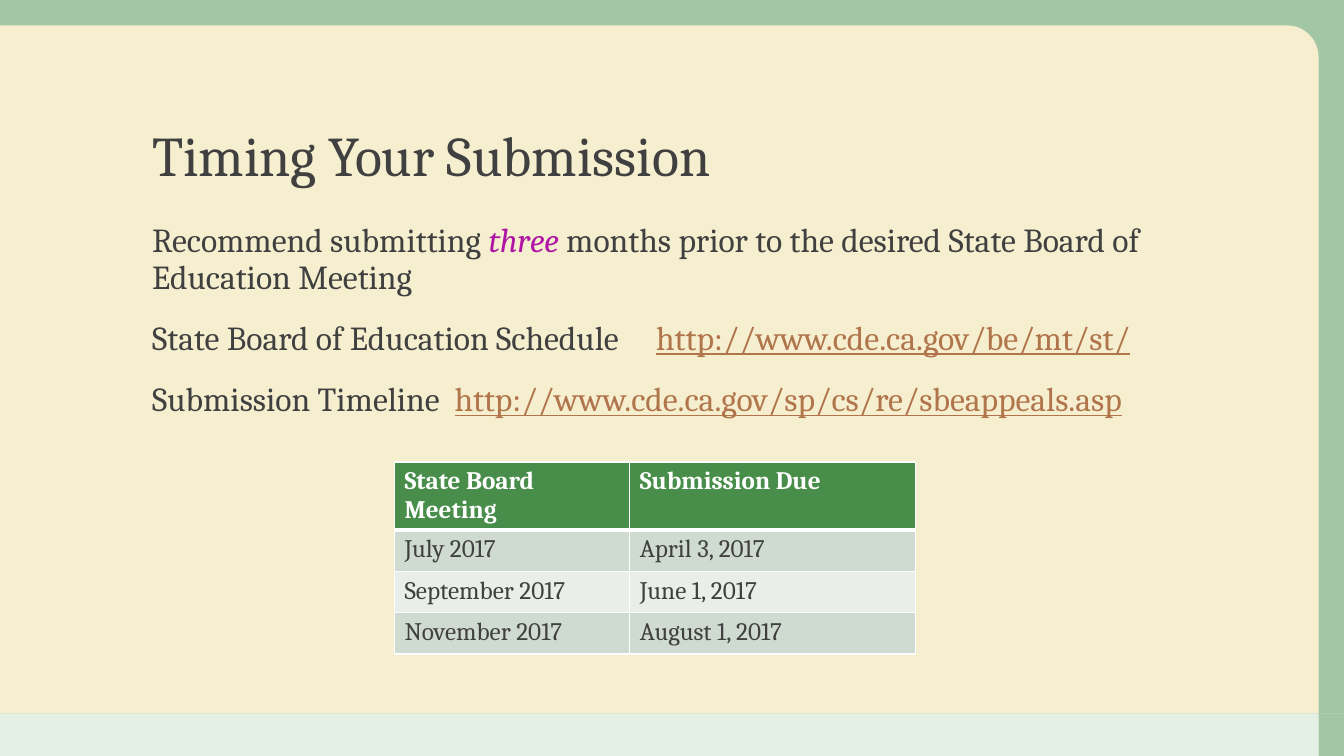
"""Build the slide on submission timing, with its schedule table."""
from typing import NamedTuple

from pptx import Presentation
from pptx.dml.color import RGBColor
from pptx.enum import shapes, text
from pptx.oxml.ns import qn
from pptx.util import Cm, Pt
from lxml import etree

FONT = "Cambria"
COLORS = {
    "ink": "404040", "accent": "B014A5", "link": "B1754C", "white": "FFFFFF",
    "green": "488E4A", "mint": "D8EBD8", "cream": "F5EECF",
    "band": "CFDBD0", "light_band": "E9EEE9",
}
WIDTH, HEIGHT = 33.87, 19.05
PANEL_RIGHT, PANEL_BOTTOM, EDGE = 33.23, 17.98, 0.64


class Panel(NamedTuple):
    left: float
    top: float
    right: float
    bottom: float
    color: str
    opacity: int = 100
    rounding: float = 0


class Piece(NamedTuple):
    wording: str
    color: str = "ink"
    italic: bool = False
    underline: bool = False


class Line(NamedTuple):
    pieces: list[Piece]
    tab: float = 0


PANELS = [
    Panel(0, PANEL_BOTTOM, PANEL_RIGHT, HEIGHT, "mint", 70),
    Panel(PANEL_RIGHT, PANEL_BOTTOM, WIDTH, HEIGHT, "green", 50),
    Panel(0, 0, WIDTH, PANEL_BOTTOM, "green", 50),
    Panel(0, EDGE, PANEL_RIGHT, PANEL_BOTTOM, "cream", rounding=0.046),
]
LINES = [
    Line([Piece("Recommend submitting "), Piece("three", "accent", italic=True),
          Piece(" months prior to the desired State Board of Education Meeting")]),
    Line([Piece("State Board of Education Schedule\t"),
          Piece("http://www.cde.ca.gov/be/mt/st/", "link", underline=True)], 12.52),
    Line([Piece("Submission Timeline\t"),
          Piece("http://www.cde.ca.gov/sp/cs/re/sbeappeals.asp", "link", underline=True)], 7.83),
]
SCHEDULE = [
    ("State Board Meeting", "Submission Due"),
    ("July 2017", "April 3, 2017"),
    ("September 2017", "June 1, 2017"),
    ("November 2017", "August 1, 2017"),
]
COLUMN_WIDTHS = (5.93, 7.2)
ROW_HEIGHT = 1.04


def rgb(name: str) -> RGBColor:
    """Return the named colour."""
    return RGBColor.from_string(COLORS[name])


def style_font(font, size: float, color: str, bold: bool = False) -> None:
    """Set typeface, size, colour and weight."""
    font.name, font.size, font.bold = FONT, Pt(size), bold
    font.color.rgb = rgb(color)


def add_panel(slide, panel: Panel) -> None:
    """Draw one background panel."""
    kind = shapes.MSO_SHAPE.ROUND_1_RECTANGLE if panel.rounding else shapes.MSO_SHAPE.RECTANGLE
    shape = slide.shapes.add_shape(
        kind, Cm(panel.left), Cm(panel.top),
        Cm(panel.right - panel.left), Cm(panel.bottom - panel.top))
    shape.shadow.inherit = False
    shape.line.fill.background()
    shape.fill.solid()
    shape.fill.fore_color.rgb = rgb(panel.color)
    if panel.rounding:
        shape.adjustments[0] = panel.rounding
    if panel.opacity < 100:
        color = shape._element.spPr.find(f".//{qn('a:srgbClr')}")
        etree.SubElement(color, qn("a:alpha"), val=str(panel.opacity * 1000))


def place(slide, shape, top: float, height: float, anchor) -> None:
    """Move a placeholder in front of the panels and set its frame."""
    slide.shapes._spTree.append(shape._element)
    shape.left, shape.top, shape.width, shape.height = Cm(3.58), Cm(top), Cm(26.67), Cm(height)
    frame = shape.text_frame
    frame.word_wrap = True
    frame.auto_size = text.MSO_AUTO_SIZE.NONE
    frame.vertical_anchor = anchor


def fill_title(slide, wording: str) -> None:
    """Write the title."""
    title = slide.shapes.title
    place(slide, title, 1.57, 3.3, text.MSO_ANCHOR.BOTTOM)
    title.text_frame.text = wording
    paragraph = title.text_frame.paragraphs[0]
    paragraph.alignment = text.PP_ALIGN.LEFT
    paragraph.line_spacing = 0.9
    style_font(paragraph.runs[0].font, 40, "ink")


def fill_body(slide, lines: list[Line]) -> None:
    """Write the unbulleted body lines."""
    body = slide.placeholders[1]
    place(slide, body, 5.51, 11.63, text.MSO_ANCHOR.TOP)
    frame = body.text_frame
    frame.text = "\n".join("" for _ in lines)
    for paragraph, line in zip(frame.paragraphs, lines):
        paragraph.line_spacing = 0.9
        paragraph.space_before = Pt(18)
        properties = paragraph._p.get_or_add_pPr()
        properties.set("marL", "0")
        properties.set("indent", "0")
        etree.SubElement(properties, qn("a:buNone"))
        if line.tab:
            tabs = etree.SubElement(properties, qn("a:tabLst"))
            etree.SubElement(tabs, qn("a:tab"), pos=str(int(Cm(line.tab))), algn="l")
        for piece in line.pieces:
            run = paragraph.add_run()
            run.text = piece.wording
            style_font(run.font, 24, piece.color)
            run.font.italic, run.font.underline = piece.italic, piece.underline


def add_border(cell, side: str, width: float) -> None:
    """Add a white border on one side of a cell."""
    line = etree.SubElement(cell._tc.get_or_add_tcPr(), qn(f"a:ln{side}"), w=str(int(Pt(width))))
    fill = etree.SubElement(line, qn("a:solidFill"))
    etree.SubElement(fill, qn("a:srgbClr"), val=COLORS["white"])


def add_schedule(slide, rows: list[tuple[str, str]]) -> None:
    """Draw the table of meetings and due dates."""
    table = slide.shapes.add_table(
        len(rows), len(COLUMN_WIDTHS), Cm(9.94), Cm(11.64),
        Cm(sum(COLUMN_WIDTHS)), Cm(ROW_HEIGHT * len(rows))).table
    for column, width in zip(table.columns, COLUMN_WIDTHS):
        column.width = Cm(width)
    for row_index, row in enumerate(rows):
        header = row_index == 0
        fill = "green" if header else "band" if row_index % 2 else "light_band"
        widths = {"L": 1, "R": 1, "T": 3 if row_index == 1 else 1, "B": 3 if header else 1}
        for column_index, wording in enumerate(row):
            cell = table.cell(row_index, column_index)
            cell.text_frame.text = wording
            font = cell.text_frame.paragraphs[0].runs[0].font
            style_font(font, 18, "white" if header else "ink", bold=header)
            for side, width in widths.items():
                add_border(cell, side, width)
            cell.fill.solid()
            cell.fill.fore_color.rgb = rgb(fill)


def main() -> None:
    """Build and save the presentation."""
    presentation = Presentation()
    presentation.slide_width, presentation.slide_height = Cm(WIDTH), Cm(HEIGHT)
    slide = presentation.slides.add_slide(presentation.slide_layouts[1])
    for panel in PANELS:
        add_panel(slide, panel)
    fill_title(slide, "Timing Your Submission")
    fill_body(slide, LINES)
    add_schedule(slide, SCHEDULE)
    presentation.save("out.pptx")


if __name__ == "__main__":
    main()
